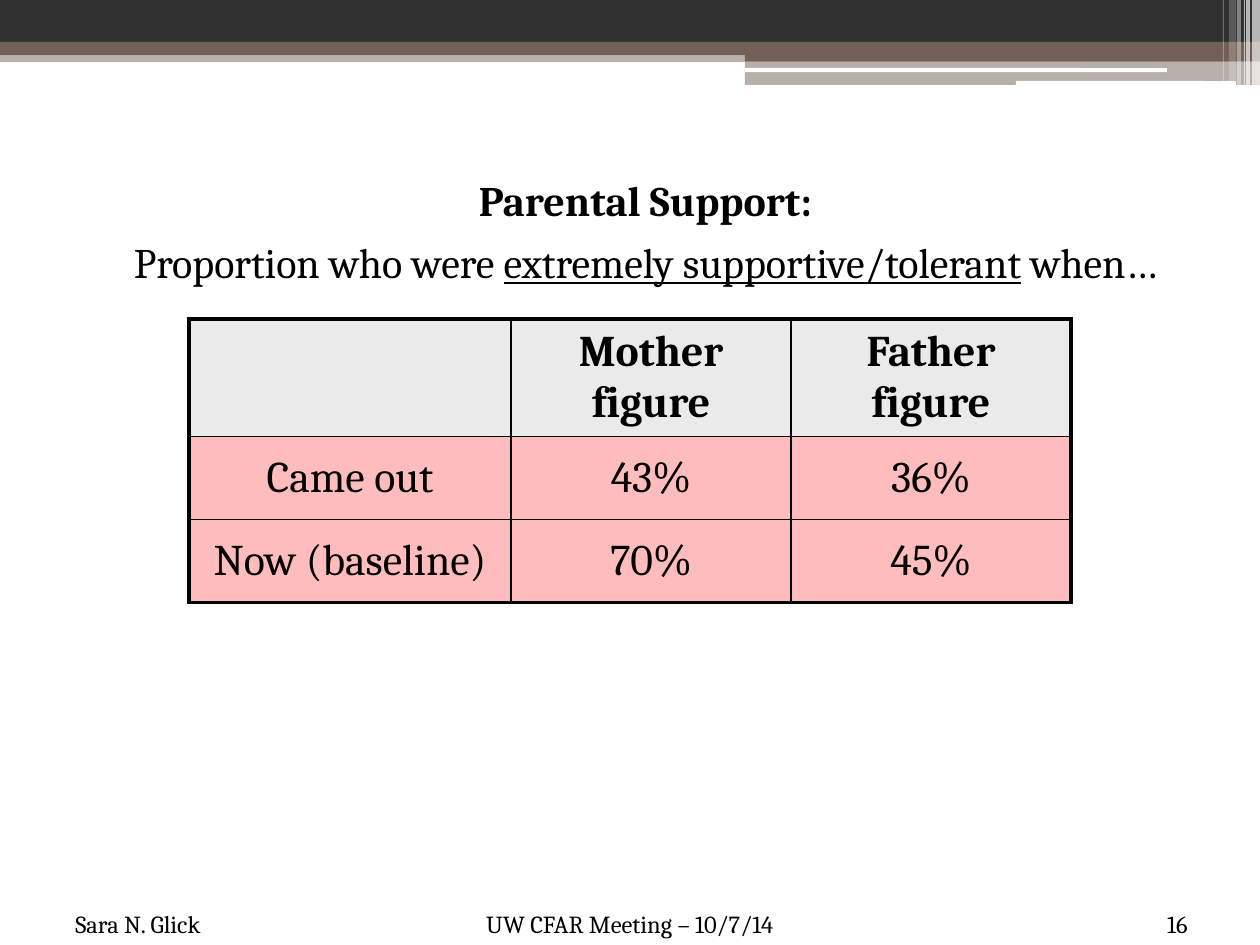
from typing import NamedTuple

from pptx import Presentation
from pptx.dml.color import RGBColor
from pptx.enum.shapes import MSO_SHAPE
from pptx.enum.text import MSO_ANCHOR, MSO_AUTO_SIZE, PP_ALIGN
from pptx.oxml.ns import qn
from pptx.util import Emu, Pt
from lxml.etree import SubElement

PX_PER_INCH = 126
FONT = "Cambria"
BLACK, WHITE, BROWN, CHARCOAL = "000000", "FFFFFF", "726056", "303030"
HEADER_FILL, ROW_FILL = "EAEAEA", "FFBCBC"
OUTER_BORDER, INNER_BORDER = 2.25, 1


class Bar(NamedTuple):
    left: int
    top: int
    width: int
    height: int
    color: str
    opacity: int = 100
    rounded: bool = False


class Footer(NamedTuple):
    text: str
    left: int
    top: int
    width: int
    height: int
    align: PP_ALIGN


BARS = [
    Bar(0, 50, 1260, 12, BROWN, 50),
    Bar(0, 0, 1260, 42, CHARCOAL),
    Bar(0, 42, 1260, 13, BROWN),
    Bar(745, 49, 515, 12, BROWN),
    Bar(745, 61, 515, 24, BROWN, 50),
    Bar(745, 68, 422, 4, WHITE, rounded=True),
    Bar(1016, 81, 220, 5, WHITE, rounded=True),
    Bar(1252, 0, 8, 85, WHITE, 65),
    Bar(1246, 0, 4, 85, WHITE, 65),
    Bar(1244, 0, 1, 85, WHITE, 60),
    Bar(1237, 0, 4, 85, WHITE, 40),
    Bar(1229, 0, 7, 81, WHITE, 20),
    Bar(1223, 0, 1, 81, WHITE, 30),
]
FOOTERS = [
    Footer("Sara N. Glick", 63, 895, 242, 50, PP_ALIGN.LEFT),
    Footer("UW CFAR Meeting – 10/7/14", 63, 895, 1134, 50, PP_ALIGN.CENTER),
    Footer("16", 1113, 882, 87, 63, PP_ALIGN.RIGHT),
]
SUPPORT_ROWS = [
    ["", "Mother figure", "Father figure"],
    ["Came out", "43%", "36%"],
    ["Now (baseline)", "70%", "45%"],
]
COLUMN_WIDTHS = [322, 280, 280]
ROW_HEIGHTS = [113, 83, 83]


def px(length: int) -> Emu:
    return Emu(round(length * 914400 / PX_PER_INCH))


def rgb(color: str) -> RGBColor:
    return RGBColor.from_string(color)


def add_span(para, text: str, *, size: float, bold: bool = False, underline: bool = False):
    span = para.add_run()
    span.text = text
    span.font.name = FONT
    span.font.size = Pt(size)
    span.font.bold = bold
    span.font.underline = underline
    span.font.color.rgb = rgb(BLACK)


def draw_bar(page, bar: Bar):
    preset = MSO_SHAPE.ROUNDED_RECTANGLE if bar.rounded else MSO_SHAPE.RECTANGLE
    shape = page.shapes.add_shape(
        preset, px(bar.left), px(bar.top), px(bar.width), px(bar.height))
    shape.shadow.inherit = False
    shape.line.fill.background()
    shape.fill.solid()
    shape.fill.fore_color.rgb = rgb(bar.color)
    if bar.opacity < 100:
        color = shape.element.spPr.find(f"{qn('a:solidFill')}/{qn('a:srgbClr')}")
        SubElement(color, qn("a:alpha"), val=str(bar.opacity * 1000))


def draw_footer(page, footer: Footer):
    box = page.shapes.add_textbox(
        px(footer.left), px(footer.top), px(footer.width), px(footer.height))
    frame = box.text_frame
    frame.word_wrap = True
    frame.vertical_anchor = MSO_ANCHOR.BOTTOM
    para = frame.paragraphs[0]
    para.alignment = footer.align
    add_span(para, footer.text, size=14)


def start_heading_line(para):
    """Centre a body paragraph, with a hanging indent and no bullet."""
    para.alignment = PP_ALIGN.CENTER
    para.space_before = Pt(7)
    properties = para._p.get_or_add_pPr()
    properties.set("marL", str(px(44)))
    properties.set("indent", str(-px(44)))
    SubElement(properties, qn("a:buNone"))


def fill_heading(body):
    body.left, body.top, body.width, body.height = px(63), px(168), px(1165), px(140)
    frame = body.text_frame
    frame.auto_size = MSO_AUTO_SIZE.NONE
    frame.vertical_anchor = MSO_ANCHOR.TOP
    title, question = frame.paragraphs[0], frame.add_paragraph()
    start_heading_line(title)
    add_span(title, "Parental Support:", size=24, bold=True)
    start_heading_line(question)
    add_span(question, "Proportion who were ", size=24)
    add_span(question, "extremely supportive/tolerant", size=24, underline=True)
    add_span(question, " when…", size=24)


def set_borders(cell, outer_sides: dict[str, bool]):
    """Draw each side, heavier where it lies on the table's edge."""
    properties = cell._tc.get_or_add_tcPr()
    for side, is_outer in outer_sides.items():
        width = Pt(OUTER_BORDER if is_outer else INNER_BORDER)
        line = SubElement(properties, qn(f"a:ln{side}"), w=str(width))
        fill = SubElement(line, qn("a:solidFill"))
        SubElement(fill, qn("a:srgbClr"), val=BLACK)


def draw_support_table(page):
    last_row, last_column = len(ROW_HEIGHTS) - 1, len(COLUMN_WIDTHS) - 1
    table = page.shapes.add_table(
        len(ROW_HEIGHTS), len(COLUMN_WIDTHS), px(189), px(319),
        px(sum(COLUMN_WIDTHS)), px(sum(ROW_HEIGHTS))).table
    for column, width in zip(table.columns, COLUMN_WIDTHS):
        column.width = px(width)
    for row, height in zip(table.rows, ROW_HEIGHTS):
        row.height = px(height)
    for i, texts in enumerate(SUPPORT_ROWS):
        for j, text in enumerate(texts):
            cell = table.cell(i, j)
            set_borders(cell, {"L": j == 0, "R": j == last_column,
                               "T": i == 0, "B": i == last_row})
            cell.fill.solid()
            cell.fill.fore_color.rgb = rgb(HEADER_FILL if i == 0 else ROW_FILL)
            cell.vertical_anchor = MSO_ANCHOR.MIDDLE
            if text:
                para = cell.text_frame.paragraphs[0]
                para.alignment = PP_ALIGN.CENTER
                para.space_before = Pt(7)
                add_span(para, text, size=25, bold=i == 0)


def main():
    deck = Presentation()
    deck.slide_width, deck.slide_height = px(1260), px(945)
    page = deck.slides.add_slide(deck.slide_layouts[1])
    title = page.shapes.title.element
    title.getparent().remove(title)
    for bar in BARS:
        draw_bar(page, bar)
    for footer in FOOTERS:
        draw_footer(page, footer)
    fill_heading(page.placeholders[1])
    draw_support_table(page)
    deck.save("out.pptx")


if __name__ == "__main__":
    main()
